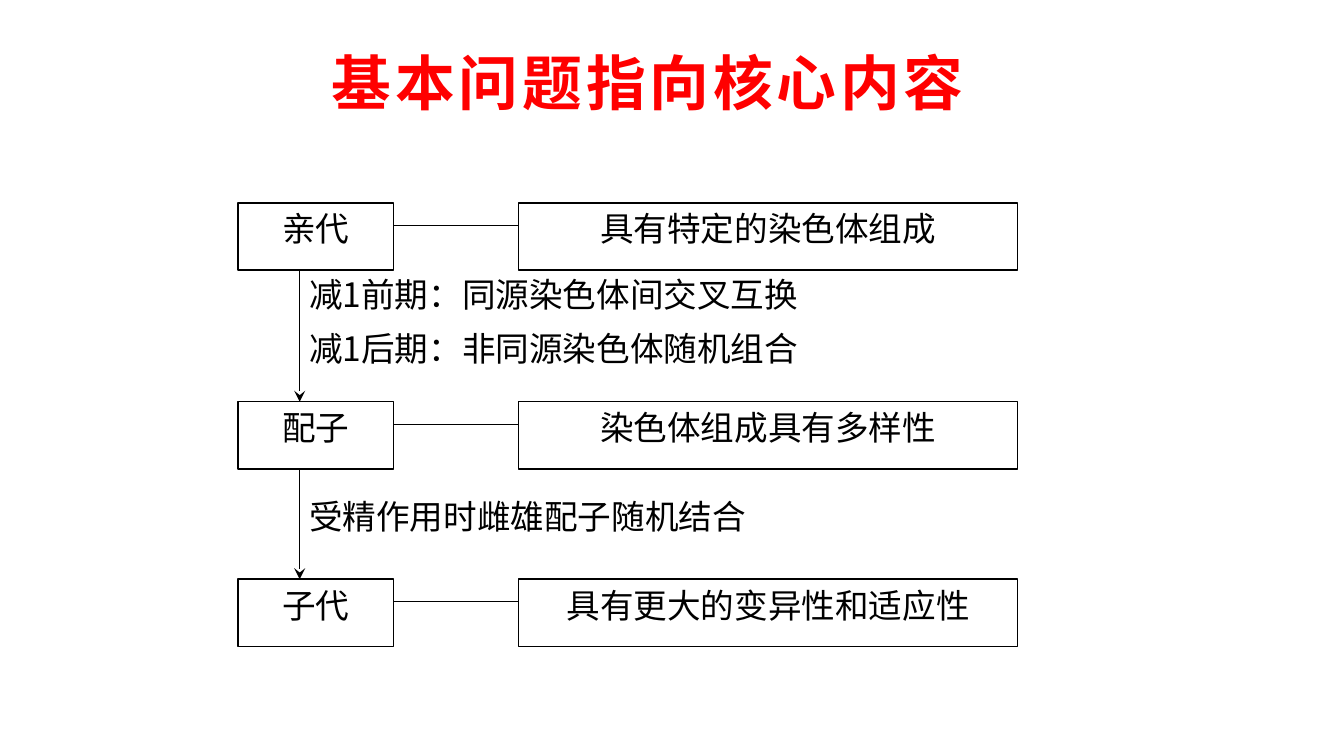
from pptx import Presentation
from pptx.dml.color import RGBColor
from pptx.enum.shapes import MSO_CONNECTOR as Connector, MSO_SHAPE as Shape
from pptx.enum.text import MSO_ANCHOR as Anchor, PP_ALIGN as Align
from pptx.oxml.ns import qn
from pptx.util import Inches, Pt
from lxml.etree import SubElement

BLACK = RGBColor(0, 0, 0)
WHITE = RGBColor(255, 255, 255)
RED = RGBColor(255, 0, 0)
FONT = "Noto Sans CJK SC"

PAGE_WIDTH = 10
PAGE_HEIGHT = PAGE_WIDTH * 9 / 16
STAGE_LEFT, STAGE_WIDTH = 1.77, 1.16
TRAIT_LEFT, TRAIT_WIDTH = 3.86, 3.71
AXIS = 2.23
ROW_HEIGHT = 0.5
LINK_DROP = ROW_HEIGHT / 3
STAGES = [
    (1.51, "亲代", "具有特定的染色体组成"),
    (2.99, "配子", "染色体组成具有多样性"),
    (4.31, "子代", "具有更大的变异性和适应性"),
]
PROCESSES = [
    (3.65, 3.91, "受精作用时雌雄配子随机结合"),
    (2.0, 4.4, "减1前期：同源染色体间交叉互换"),
    (2.4, 4.4, "减1后期：非同源染色体随机组合"),
]


def write(frame, text, size, color, align):
    para = frame.paragraphs[0]
    para.alignment = align
    span = para.add_run()
    span.text = text
    span.font.size = Pt(size)
    span.font.color.rgb = color
    span.font.name = FONT
    SubElement(span.font._element, qn("a:ea")).set("typeface", FONT)
    return span


def add_title(page, text):
    title = page.shapes.title
    title.left, title.top = Inches(2.37), Inches(0.43)
    title.width, title.height = Inches(6.08), Inches(0.36)
    title.text_frame.vertical_anchor = Anchor.MIDDLE
    span = write(title.text_frame, text, 32, RED, Align.LEFT)
    span.font.bold = True
    span.font._element.set("spc", "200")


def add_box(page, left, top, width, text, align=Align.CENTER, outlined=True):
    box = page.shapes.add_shape(
        Shape.RECTANGLE, Inches(left), Inches(top), Inches(width), Inches(ROW_HEIGHT)
    )
    box.shadow.inherit = False
    box.fill.solid()
    box.fill.fore_color.rgb = WHITE
    if outlined:
        box.line.color.rgb = BLACK
        box.line.width = Pt(0.75)
    else:
        box.line.fill.background()
    frame = box.text_frame
    frame.word_wrap = True
    frame.vertical_anchor = Anchor.TOP
    frame.margin_left = frame.margin_right = Inches(0.07)
    frame.margin_top = frame.margin_bottom = Inches(0.04)
    write(frame, text, 18, BLACK, align)


def add_line(page, start, end, arrow=False):
    line = page.shapes.add_connector(
        Connector.STRAIGHT, *(Inches(length) for length in (*start, *end))
    )
    line.line.color.rgb = BLACK
    line.line.width = Pt(0.75)
    if arrow:
        SubElement(line.line._get_or_add_ln(), qn("a:tailEnd")).set("type", "stealth")
    SubElement(line._element.spPr, qn("a:effectLst"))


def main():
    deck = Presentation()
    deck.slide_width, deck.slide_height = Inches(PAGE_WIDTH), Inches(PAGE_HEIGHT)
    page = deck.slides.add_slide(deck.slide_layouts[5])
    add_title(page, "基本问题指向核心内容")
    for top, width, text in PROCESSES:
        add_box(page, AXIS, top, width, text, Align.JUSTIFY, outlined=False)
    for top, stage, trait in STAGES:
        add_box(page, STAGE_LEFT, top, STAGE_WIDTH, stage)
        add_box(page, TRAIT_LEFT, top, TRAIT_WIDTH, trait)
        link = top + LINK_DROP
        add_line(page, (STAGE_LEFT + STAGE_WIDTH, link), (TRAIT_LEFT, link))
    for (upper, *_), (lower, *_) in zip(STAGES, STAGES[1:]):
        add_line(page, (AXIS, upper + ROW_HEIGHT), (AXIS, lower), arrow=True)
    deck.save("out.pptx")


if __name__ == "__main__":
    main()
